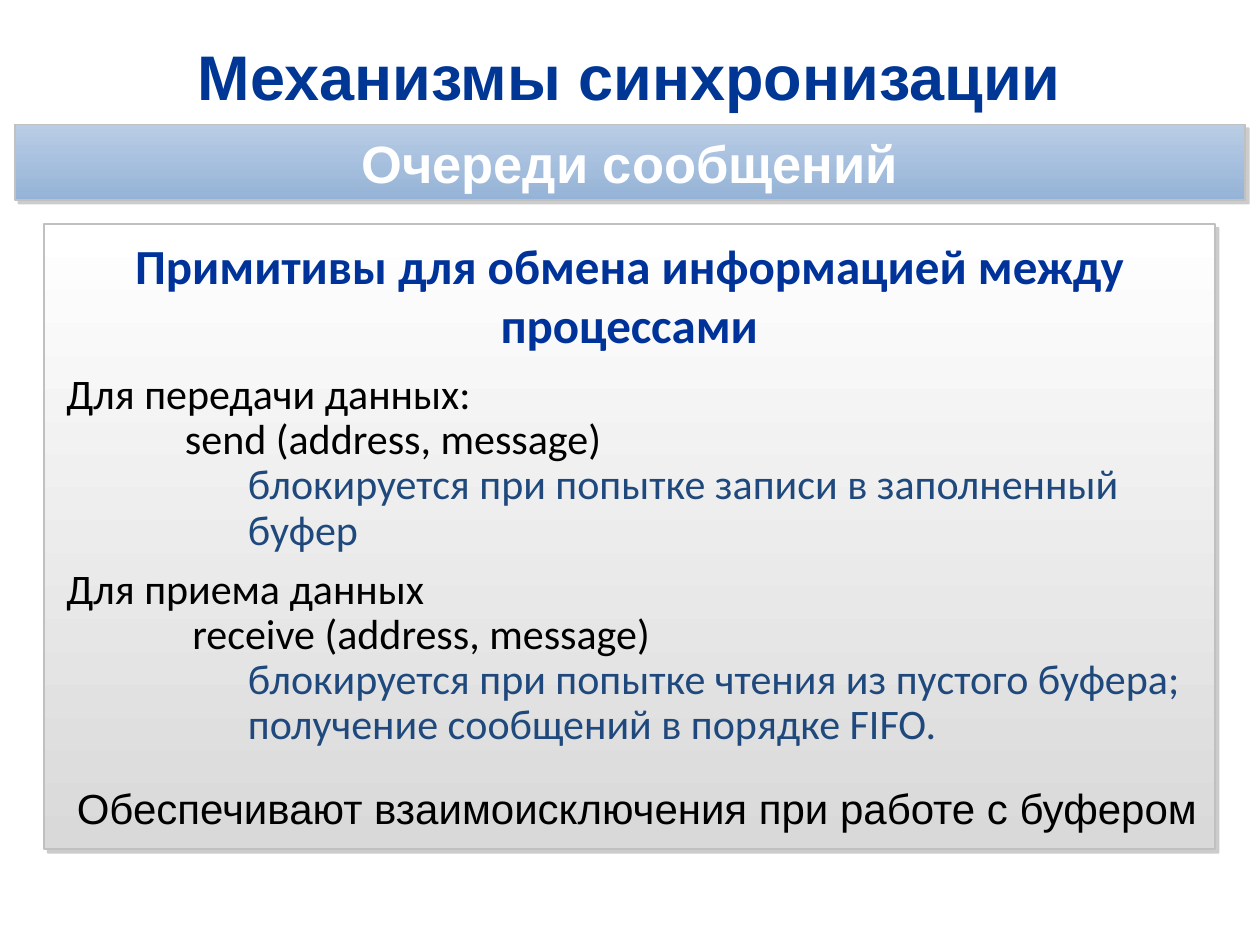
from dataclasses import dataclass, field
from typing import Optional

from lxml import etree
from pptx import Presentation
from pptx.dml.color import RGBColor
from pptx.enum import shapes, text
from pptx.oxml.ns import qn
from pptx.util import Cm, Pt


@dataclass(frozen=True)
class Theme:
    head_font: str = "Arial"
    body_font: str = "Calibri"
    title: str = "003794"
    heading: str = "003399"
    ink: str = "000000"
    note: str = "1F497D"
    white: str = "FFFFFF"
    border: str = "C0C0C0"
    shadow: str = "808080"
    banner: tuple = ("B9CDE5", "95B3D7")
    panel: tuple = ("FFFFFF", "D9D9D9")
    title_size: int = 36
    banner_size: int = 30
    heading_size: int = 28
    body_size: int = 24


T = Theme()
CENTER = text.PP_ALIGN.CENTER
MIDDLE = text.MSO_ANCHOR.MIDDLE


@dataclass(frozen=True)
class Box:
    left: float
    top: float
    width: float
    height: float

    def emu(self) -> tuple:
        return Cm(self.left), Cm(self.top), Cm(self.width), Cm(self.height)


@dataclass(frozen=True)
class Para:
    text: str
    color: str = T.ink
    size: int = T.body_size
    font: str = T.body_font
    bold: bool = False
    margin: float = 0
    indent: float = 0
    fmt: dict = field(default_factory=dict)


def write(tf, paras: list[Para], anchor: Optional[text.MSO_ANCHOR] = None,
          inset: tuple = (0.25, 0.13)) -> None:
    """Fill a text frame with formatted paragraphs."""
    side, edge = (Cm(v) for v in inset)
    frame = dict(word_wrap=True, vertical_anchor=anchor or text.MSO_ANCHOR.TOP,
                 margin_left=side, margin_right=side,
                 margin_top=edge, margin_bottom=edge)
    for name, value in frame.items():
        setattr(tf, name, value)
    for i, item in enumerate(paras):
        p = tf.add_paragraph() if i else tf.paragraphs[0]
        for name, value in item.fmt.items():
            setattr(p, name, value)
        pPr = p._p.get_or_add_pPr()
        pPr.set("marL", str(Cm(item.margin)))
        pPr.set("indent", str(Cm(item.indent)))
        r = p.add_run()
        r.text = item.text
        font = dict(name=item.font, size=Pt(item.size), bold=item.bold)
        for name, value in font.items():
            setattr(r.font, name, value)
        r.font.color.rgb = RGBColor.from_string(item.color)


def add_text(s, box: Box, paras: list[Para], anchor=None) -> None:
    write(s.shapes.add_textbox(*box.emu()).text_frame, paras, anchor)


def add_panel(s, box: Box, colors: tuple):
    """Add a bordered rectangle with a vertical gradient and a drop shadow."""
    sp = s.shapes.add_shape(shapes.MSO_SHAPE.RECTANGLE, *box.emu())
    sp.fill.gradient()
    sp.fill.gradient_angle = 270
    for stop, color in zip(sp.fill.gradient_stops, colors):
        stop.color.rgb = RGBColor.from_string(color)
    sp.line.color.rgb = RGBColor.from_string(T.border)
    sp.line.width = Pt(1)
    sp.shadow.inherit = False
    effects = sp._element.spPr.find(qn("a:effectLst"))
    outer = etree.SubElement(effects, qn("a:outerShdw"), blurRad="0",
                             dist=str(Pt(3)), dir=str(45 * 60000),
                             algn="ctr", rotWithShape="0")
    color = etree.SubElement(outer, qn("a:srgbClr"), val=T.shadow)
    etree.SubElement(color, qn("a:alpha"), val="40000")
    return sp


def main() -> None:
    prs = Presentation()
    prs.slide_width, prs.slide_height = Cm(25.4), Cm(19.05)
    s = prs.slides.add_slide(prs.slide_layouts[6])

    # Title
    add_text(s, Box(0.89, 0.66, 23.6, 1.73),
             [Para("Механизмы синхронизации", T.title, T.title_size,
                   T.head_font, True, fmt=dict(alignment=CENTER))], MIDDLE)

    # Topic banner
    banner = add_panel(s, Box(0.3, 2.51, 24.8, 1.52), T.banner)
    write(banner.text_frame,
          [Para("Очереди сообщений", T.white, T.banner_size, T.head_font, True,
                fmt=dict(alignment=CENTER))], MIDDLE, (0.61, 0.1))

    # Panel with the message primitives
    add_panel(s, Box(0.89, 4.52, 23.6, 12.6), T.panel)
    tight = dict(line_spacing=0.9)
    note = dict(color=T.note, margin=3.66, fmt=tight)
    add_text(s, Box(1.09, 4.62, 23.19, 10.69), [
        Para("Примитивы для обмена информацией между процессами", T.heading,
             T.heading_size, bold=True,
             fmt=dict(alignment=CENTER, space_after=Pt(11.2))),
        Para("Для передачи данных:", fmt=tight),
        Para("send (address, message)", margin=3.18, indent=-0.79, fmt=tight),
        Para("блокируется при попытке записи в заполненный буфер", **note),
        Para("Для приема данных", fmt=dict(space_before=Pt(4.8))),
        Para("receive (address, message)", margin=3.18, indent=-0.64, fmt=tight),
        Para("блокируется при попытке чтения из пустого буфера; "
             "получение сообщений в порядке FIFO.", **note),
    ])

    # Conclusion
    add_text(s, Box(1.3, 15.65, 23.19, 1.27),
             [Para("Обеспечивают взаимоисключения при работе с буфером",
                   font=T.head_font)])

    prs.save("out.pptx")


if __name__ == "__main__":
    main()
